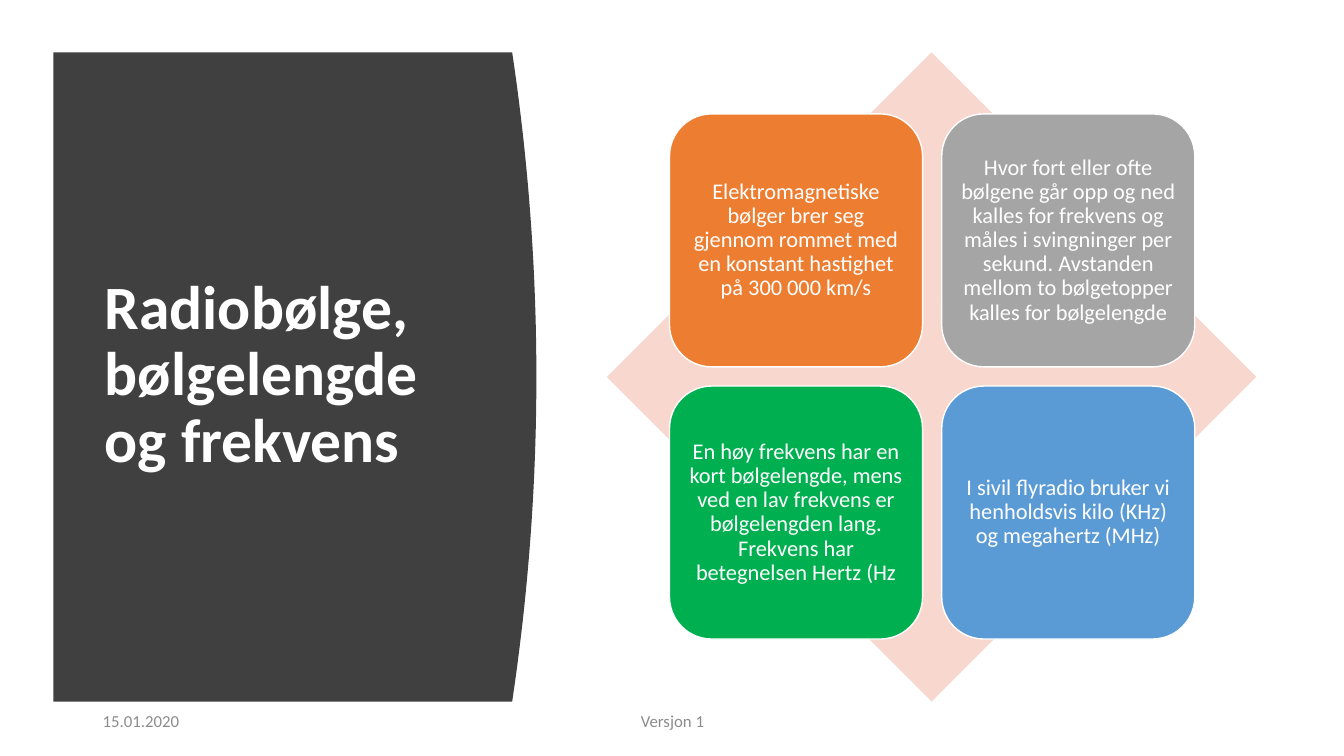
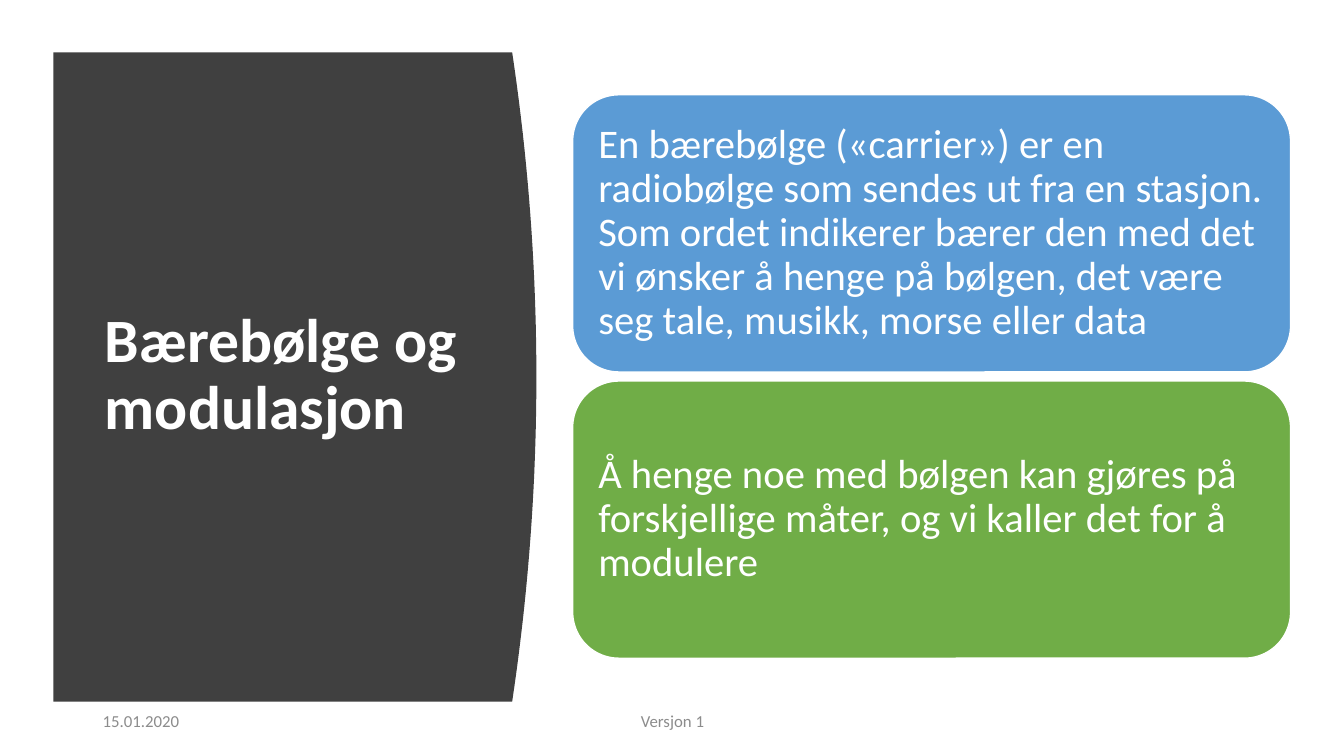
from pptx import Presentation
from pptx.dml.color import RGBColor
from pptx.enum.shapes import MSO_SHAPE as SHAPE
from pptx.enum.text import MSO_ANCHOR as ANCHOR, MSO_AUTO_SIZE as AUTO, PP_ALIGN as ALIGN
from pptx.util import Inches, Pt

# Content
COLORS = {
    "panel": "404040", "white": "FFFFFF", "footer": "8C8C8C", "diamond": "F8D7CE",
    "orange": "ED7D31", "gray": "A5A5A5", "green": "00B050", "blue": "5B9BD5",
    "leaf": "70AD47",
}
FONT = "Calibri"
FOOTERS = [  # text, left, width, alignment
    ("15.01.2020", 0.92, 3, ALIGN.LEFT),
    ("Versjon 1", 4.42, 4.5, ALIGN.CENTER),
]
SLIDES = [
    {
        "title": "Radiobølge, bølgelengde og frekvens",
        "diamond": (6.02, 0.52, 6.44, 6.44),
        "grid": {"left": 6.64, "top": 1.13, "width": 2.51, "height": 2.51,
                 "gap": 0.19, "columns": 2},
        "text": {"size": 16, "inset": 0.07, "align": ALIGN.CENTER},
        "cards": [
            ("orange", "Elektromagnetiske bølger brer seg gjennom rommet med en "
                       "konstant hastighet på 300 000 km/s"),
            ("gray", "Hvor fort eller ofte bølgene går opp og ned kalles for frekvens "
                     "og måles i svingninger per sekund. Avstanden mellom to "
                     "bølgetopper kalles for bølgelengde"),
            ("green", "En høy frekvens har en kort bølgelengde, mens ved en lav "
                      "frekvens er bølgelengden lang. Frekvens har betegnelsen "
                      "Hertz (Hz"),
            ("blue", "I sivil flyradio bruker vi henholdsvis kilo (KHz) og "
                     "megahertz (MHz)"),
        ],
    },
    {
        "title": "Bærebølge og modulasjon",
        "grid": {"left": 5.68, "top": 0.94, "width": 7.12, "height": 2.75,
                 "gap": 0.09, "columns": 1},
        "text": {"size": 29, "inset": 0.12, "align": ALIGN.LEFT},
        "cards": [
            ("blue", "En bærebølge («carrier») er en radiobølge som sendes ut fra en "
                     "stasjon. Som ordet indikerer bærer den med det vi ønsker å henge "
                     "på bølgen, det være seg tale, musikk, morse eller data"),
            ("leaf", "Å henge noe med bølgen kan gjøres på forskjellige måter, og vi "
                     "kaller det for å modulere"),
        ],
    },
]


def rgb(name):
    return RGBColor.from_string(COLORS[name])


def paint(sp, fill, line=None):
    sp.shadow.inherit = False
    sp.fill.solid()
    sp.fill.fore_color.rgb = rgb(fill)
    if line:
        sp.line.color.rgb = rgb(line)
        sp.line.width = Pt(1)
    else:
        sp.line.fill.background()


def write(sp, text, size, color="white", align=ALIGN.LEFT, bold=False,
          spacing=0.9, inset=None):
    tf = sp.text_frame
    tf.text = text
    tf.word_wrap = True
    tf.auto_size = AUTO.NONE
    tf.vertical_anchor = ANCHOR.MIDDLE
    if inset is not None:
        tf.margin_left = tf.margin_right = Inches(inset)
        tf.margin_top = tf.margin_bottom = Inches(inset)
    p = tf.paragraphs[0]
    p.alignment = align
    p.line_spacing = spacing
    font = p.runs[0].font
    font.name, font.size, font.bold = FONT, Pt(size), bold
    font.color.rgb = rgb(color)


def add_panel(s):
    """Dark panel whose right side bulges as a shallow parabola."""
    left, top, right, bottom, bulge, steps = 0.53, 0.52, 5.08, 6.96, 0.24, 40
    curve = []
    for i in range(steps + 1):
        t = i / steps
        curve.append((Inches(right + bulge * 4 * t * (1 - t)),
                      Inches(top + (bottom - top) * t)))
    fb = s.shapes.build_freeform(Inches(left), Inches(top))
    fb.add_line_segments(curve + [(Inches(left), Inches(bottom))], close=True)
    panel = fb.convert_to_shape()
    paint(panel, "panel")
    return panel


def add_frame(prs, title):
    """Slide with the shared panel, title and footers."""
    s = prs.slides.add_slide(prs.slide_layouts[5])
    sp = s.shapes.title
    sp.left, sp.top, sp.width, sp.height = map(Inches, (0.94, 1.11, 3.74, 5.24))
    write(sp, title, 44, bold=True)
    sp.element.addprevious(add_panel(s).element)  # panel goes behind the title
    for text, left, width, align in FOOTERS:
        box = s.shapes.add_textbox(Inches(left), Inches(6.95), Inches(width), Inches(0.4))
        write(box, text, 12, "footer", align, spacing=1.0)
    return s


def add_cards(s, cards, grid, style):
    w, h, gap = grid["width"], grid["height"], grid["gap"]
    for i, (fill, text) in enumerate(cards):
        row, col = divmod(i, grid["columns"])
        card = s.shapes.add_shape(
            SHAPE.ROUNDED_RECTANGLE,
            Inches(grid["left"] + col * (w + gap)), Inches(grid["top"] + row * (h + gap)),
            Inches(w), Inches(h))
        paint(card, fill, "white")
        write(card, text, **style)


def main():
    prs = Presentation()
    prs.slide_width, prs.slide_height = Inches(13.33), Inches(7.5)
    for slide in SLIDES:
        s = add_frame(prs, slide["title"])
        if "diamond" in slide:
            paint(s.shapes.add_shape(SHAPE.DIAMOND, *map(Inches, slide["diamond"])), "diamond")
        add_cards(s, slide["cards"], slide["grid"], slide["text"])
    prs.save("out.pptx")


if __name__ == "__main__":
    main()
